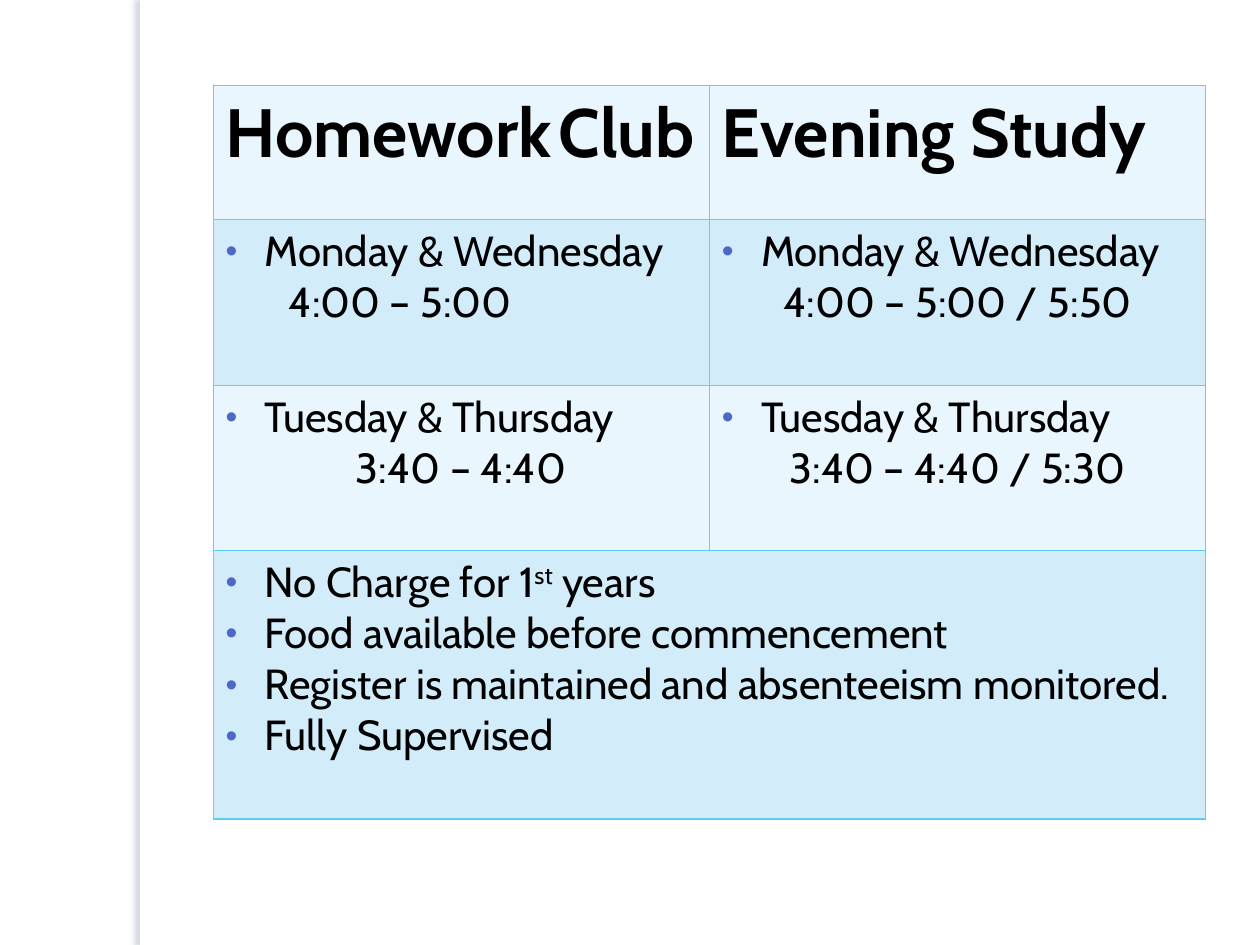
import pptx
import pptx.dml.color
import pptx.enum.shapes
import pptx.enum.text
import pptx.oxml
import pptx.oxml.ns
import pptx.util

Inches = pptx.util.Inches
Pt = pptx.util.Pt

# Content: each line is a list of runs; a run is a text and its own formatting
HEADINGS = [
    [("Homework", {}), (" ", {"size": 18}), ("Club", {})],
    [("Evening Study", {})],
]
SESSIONS = [  # a time that starts with a tab is set at the tab stop, the others are centred
    ("Monday & Wednesday", ["\t4:00 – 5:00", "4:00 – 5:00 / 5:50"]),
    ("Tuesday & Thursday", ["3:40 – 4:40", "3:40 – 4:40 / 5:30"]),
]
NOTES = [
    [("No Charge for 1", {}), ("st", {"baseline": 30}), (" years", {})],
    [("Food available before commencement", {})],
    [("Register is maintained and absenteeism monitored.", {})],
    [("Fully Supervised", {})],
]

# Look
COLOURS = {"white": "FFFFFF", "text": "000000", "bullet": "4E67C8", "light": "EAF6FD",
           "dark": "D2ECFA", "grid": "9DB8C8", "accent": "5ECCF3", "shadow": "586E7E"}
FONT = "Cabin"
TABLE_LEFT, TABLE_TOP, COLUMN_WIDTH = 1.69, 0.68, 3.94
ROW_HEIGHTS = [1.06, 1.32, 1.31, 2.13]
INDENT = 0.31


def colour(name):
    return pptx.dml.color.RGBColor.from_string(COLOURS[name])


def add_xml(parent, xml, position=None):
    element = pptx.oxml.parse_xml(xml.replace(" ", f" {pptx.oxml.ns.nsdecls('a')} ", 1))
    parent.insert(len(parent) if position is None else position, element)


def write_line(cell, runs, size=24, bold=False, bullet=False, centred=False):
    frame = cell.text_frame
    para = frame.paragraphs[0]
    if para.runs:
        para = frame.add_paragraph()
    if bullet:
        properties = para._p.get_or_add_pPr()
        properties.set("marL", str(Inches(INDENT)))
        properties.set("indent", str(-Inches(INDENT)))
        add_xml(properties, f'<a:buClr ><a:srgbClr val="{COLOURS["bullet"]}"/></a:buClr>')
        add_xml(properties, '<a:buSzPct val="80000"/>')
        add_xml(properties, '<a:buFont typeface="Arial"/>')
        add_xml(properties, '<a:buChar char="•"/>')
    if centred:
        para.alignment = pptx.enum.text.PP_ALIGN.CENTER
    para.font.name = FONT
    para.font.size = Pt(size)
    para.font.bold = bold
    para.font.color.rgb = colour("text")
    for text, formatting in runs:
        span = para.add_run()
        span.text = text
        if "size" in formatting:
            span.font.size = Pt(formatting["size"])
        if "baseline" in formatting:
            span._r.get_or_add_rPr().set("baseline", str(formatting["baseline"] * 1000))


def style_cell(cell, row):
    cell.fill.solid()
    cell.fill.fore_color.rgb = colour("dark" if row % 2 else "light")
    last = len(ROW_HEIGHTS) - 1
    accents = {"lnT": row == last, "lnB": row >= last - 1}
    for position, side in enumerate(["lnL", "lnR", "lnT", "lnB"]):
        name, width = ("accent", 1) if accents.get(side) else ("grid", 0.5)
        add_xml(cell._tc.get_or_add_tcPr(),
                f'<a:{side} w="{Pt(width)}"><a:solidFill><a:srgbClr val="{COLOURS[name]}"/>'
                f'</a:solidFill></a:{side}>', position)


deck = pptx.Presentation()
deck.slide_width, deck.slide_height = Inches(10), Inches(7.5)
page = deck.slides.add_slide(deck.slide_layouts[6])

# Upright strip with a soft shadow on its left
strip = page.shapes.add_shape(pptx.enum.shapes.MSO_SHAPE.RECTANGLE,
                              Inches(1.11), 0, Inches(0.08), deck.slide_height)
strip.fill.solid()
strip.fill.fore_color.rgb = colour("white")
strip.line.fill.background()
add_xml(strip._element.spPr,
        f'<a:effectLst ><a:outerShdw blurRad="{Pt(3)}" dist="{Pt(3)}" dir="10800000">'
        f'<a:srgbClr val="{COLOURS["shadow"]}"><a:alpha val="25000"/></a:srgbClr>'
        '</a:outerShdw></a:effectLst>')

# Timetable
table = page.shapes.add_table(
    len(ROW_HEIGHTS), len(HEADINGS), Inches(TABLE_LEFT), Inches(TABLE_TOP),
    Inches(COLUMN_WIDTH * len(HEADINGS)), Inches(sum(ROW_HEIGHTS))).table
table.first_row = table.horz_banding = False
for column in table.columns:
    column.width = Inches(COLUMN_WIDTH)
for index, height in enumerate(ROW_HEIGHTS):
    table.rows[index].height = Inches(height)
    for cell in table.rows[index].cells:
        style_cell(cell, index)

for column, heading in enumerate(HEADINGS):
    write_line(table.cell(0, column), heading, size=39, bold=True)
    for row, (days, times) in enumerate(SESSIONS, start=1):
        cell, time = table.cell(row, column), times[column]
        write_line(cell, [(days, {})], bullet=True)
        write_line(cell, [(time, {})], centred=not time.startswith("\t"))

# Notes across both columns
notes_cell = table.cell(3, 0)
notes_cell.merge(table.cell(3, 1))
for note in NOTES:
    write_line(notes_cell, note, bullet=True)

deck.save("out.pptx")
